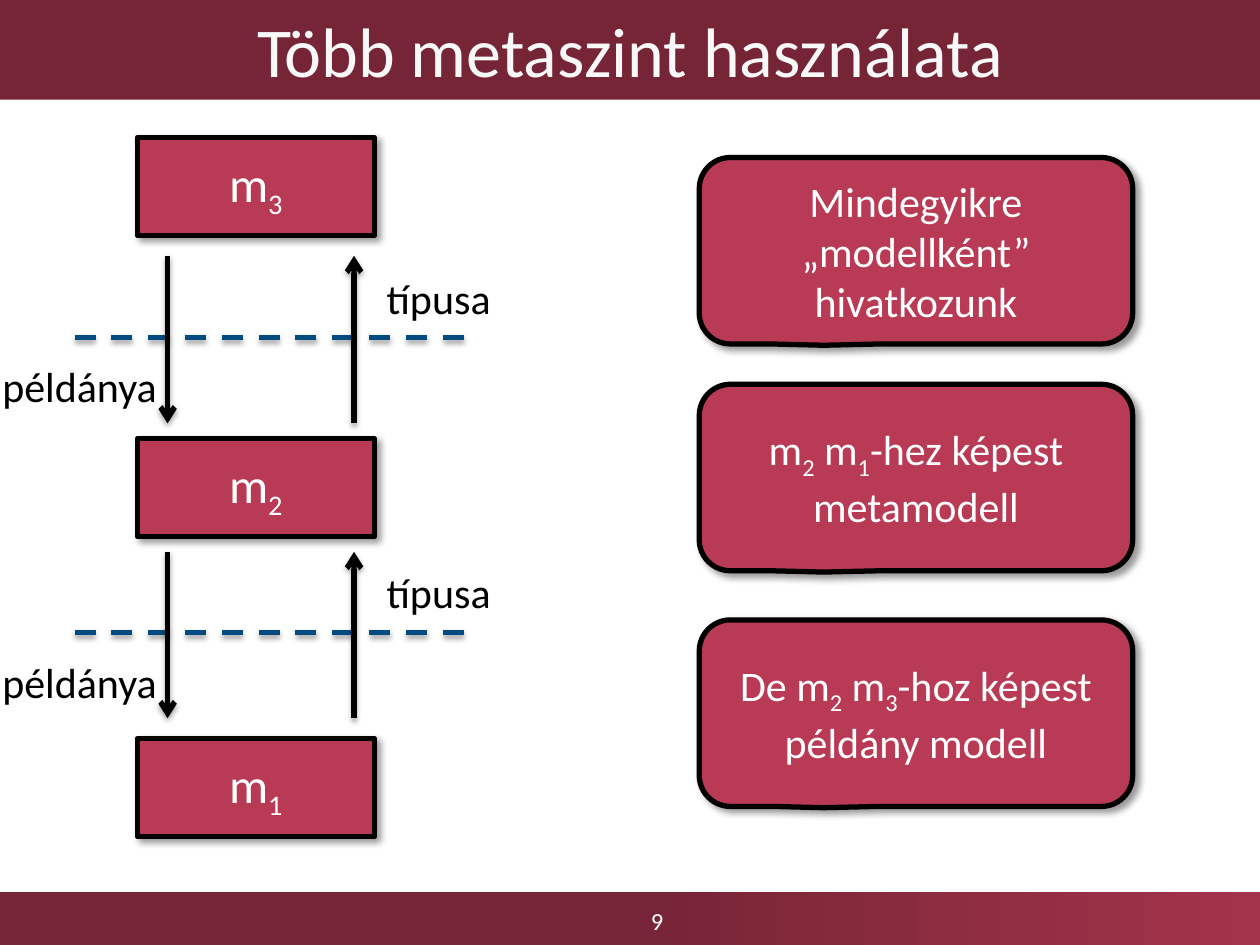
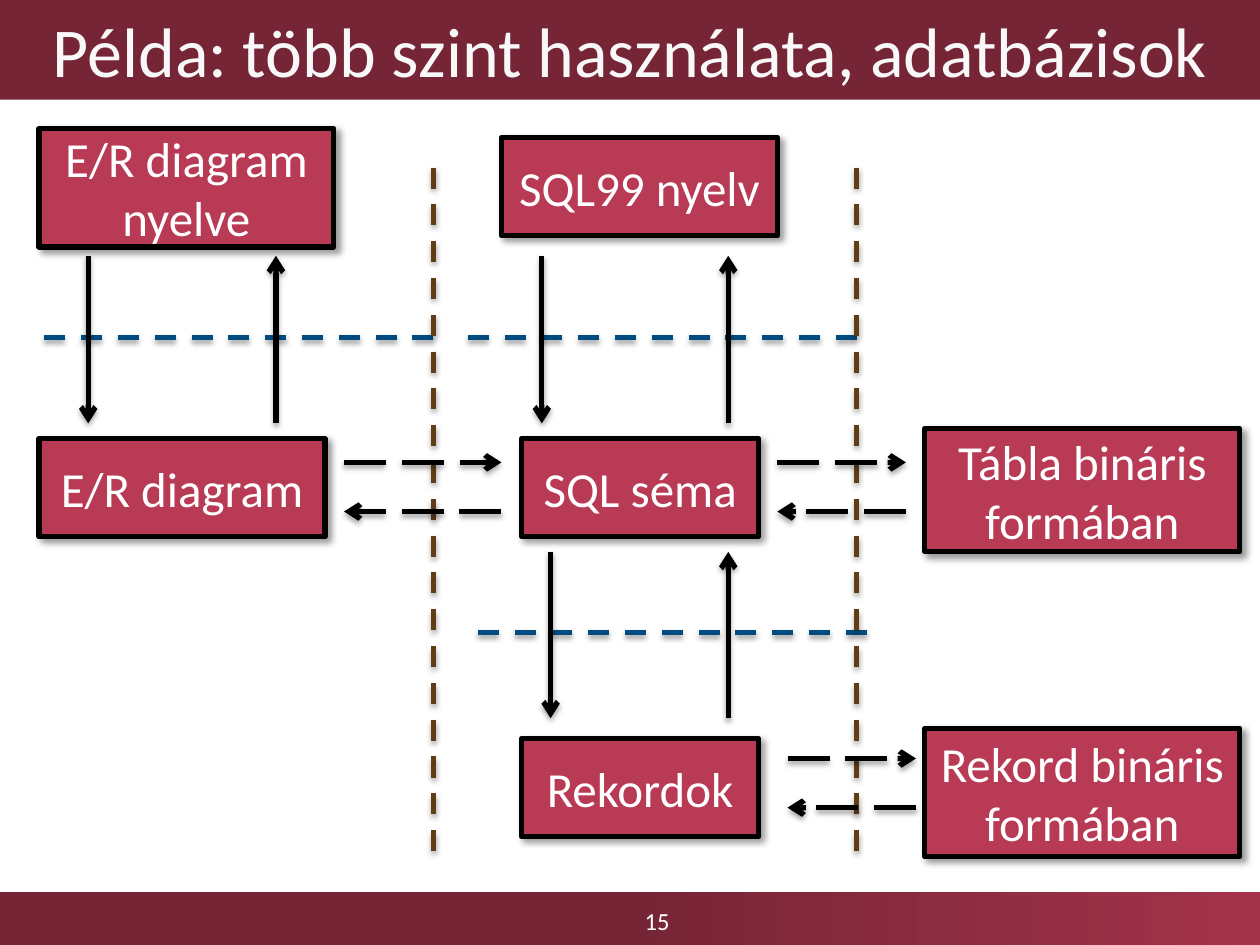
from lxml import etree
from pptx import Presentation
from pptx.dml.color import RGBColor
from pptx.enum.dml import MSO_LINE
from pptx.enum.shapes import MSO_CONNECTOR, MSO_SHAPE
from pptx.enum.text import MSO_ANCHOR, MSO_AUTO_SIZE, PP_ALIGN
from pptx.oxml.ns import qn
from pptx.util import Inches, Pt

RECT, CALLOUT = MSO_SHAPE.RECTANGLE, MSO_SHAPE.ROUNDED_RECTANGULAR_CALLOUT
STRAIGHT = MSO_CONNECTOR.STRAIGHT
DASH, LONG_DASH = MSO_LINE.DASH, MSO_LINE.LONG_DASH
CENTER, LEFT = PP_ALIGN.CENTER, PP_ALIGN.LEFT
MIDDLE, TOP = MSO_ANCHOR.MIDDLE, MSO_ANCHOR.TOP

FONT = "Calibri"
DARK_RED, BAND_RED, BOX_RED = "762536", "A3334B", "B83A55"
BLUE, BROWN, BLACK, WHITE, TITLE_WHITE = "004C80", "613D16", "000000", "FFFFFF", "F8F8F8"
# blur and distance in points, direction in degrees, opacity in percent
BOX_SHADOW, LINE_SHADOW = (4, 3, 45, 40), (3.1, 1.8, 90, 35)
rgb = RGBColor.from_string


def write(sp, text, size=28, color=WHITE, align=CENTER, anchor=MIDDLE):
    """Fill sp with one paragraph; the character after each "_" is a subscript."""
    tf = sp.text_frame
    tf.word_wrap = True
    tf.auto_size = MSO_AUTO_SIZE.NONE
    tf.vertical_anchor = anchor
    p = tf.paragraphs[0]
    p.alignment = align
    first, *rest = text.split("_")
    pieces = [(first, False)]
    for part in rest:
        pieces += [(part[0], True), (part[1:], False)]
    for piece, subscript in pieces:
        if not piece:
            continue
        r = p.add_run()
        r.text = piece
        r.font.name, r.font.size = FONT, Pt(size)
        r.font.color.rgb = rgb(color)
        if subscript:
            r.font._element.set("baseline", "-25000")


def outline(sp, shadow, color=BLACK, dash=None, arrow=False):
    """Give a shape or connector its 3 pt line, arrowhead and shadow."""
    sp.line.width = Pt(3)
    sp.line.color.rgb = rgb(color)
    if dash:
        sp.line.dash_style = dash
    spPr = sp._element.spPr
    if arrow:
        etree.SubElement(spPr.find(qn("a:ln")), qn("a:tailEnd"), type="arrow")
    blur, dist, angle, opacity = shadow
    effects = etree.SubElement(spPr, qn("a:effectLst"))
    outer = etree.SubElement(effects, qn("a:outerShdw"), blurRad=str(Pt(blur)),
                             dist=str(Pt(dist)), dir=str(angle * 60000),
                             algn="tl", rotWithShape="0")
    clr = etree.SubElement(outer, qn("a:srgbClr"), val=BLACK)
    etree.SubElement(clr, qn("a:alpha"), val=str(opacity * 1000))


# Vertical arrows run between the rows of levels
UPPER, LOWER = (2.03, 3.36), (4.38, 5.7)
UPPER_DIVIDER, LOWER_DIVIDER = 2.68, 5.02
DIVIDER_W = 3.21
BOX_H = 0.78

slides = [
    dict(
        title="Több metaszint használata", number="9",
        dividers=[(0.47, UPPER_DIVIDER), (0.47, LOWER_DIVIDER)],
        columns=[],
        levels=[(1.33, 2.81, UPPER), (1.33, 2.81, LOWER)],
        mappings=[],
        boxes=[("m_3", 1.09, 1.09, 1.88, BOX_H),
               ("m_2", 1.09, 3.48, 1.88, BOX_H),
               ("m_1", 1.09, 5.86, 1.88, BOX_H)],
        labels=[("típusa", 2.97, 2.11), ("példánya", -0.08, 2.81),
                ("típusa", 2.97, 4.45), ("példánya", -0.08, 5.16)],
        callouts=[("Mindegyikre „modellként” hivatkozunk", 1.25),
                  ("m_2 m_1-hez képest metamodell", 3.05),
                  ("De m_2 m_3-hoz képest példány modell", 4.92)],
    ),
    dict(
        title="Példa: több szint használata, adatbázisok", number="15",
        dividers=[(0.23, UPPER_DIVIDER), (3.59, UPPER_DIVIDER), (3.67, LOWER_DIVIDER)],
        columns=[3.44, 6.8],
        levels=[(0.7, 2.19, UPPER), (4.3, 5.78, UPPER), (4.37, 5.78, LOWER)],
        mappings=[(2.73, 3.98, 3.67), (6.17, 7.19, 3.67), (6.25, 7.27, 6.02)],
        boxes=[("E/R diagram nyelve", 0.31, 1.02, 2.34, 0.94),
               ("E/R diagram", 0.31, 3.48, 2.27, BOX_H),
               ("SQL99 nyelv", 3.98, 1.09, 2.19, BOX_H),
               ("SQL séma", 4.14, 3.48, 1.88, BOX_H),
               ("Rekordok", 4.14, 5.86, 1.88, BOX_H),
               ("Tábla bináris formában", 7.34, 3.4, 2.5, 0.98),
               ("Rekord bináris formában", 7.34, 5.78, 2.5, 1.02)],
        labels=[],
        callouts=[],
    ),
]

prs = Presentation()
prs.slide_width, prs.slide_height = Inches(10), Inches(7.5)
layout = prs.slide_layouts[5]

for content in slides:
    slide = prs.slides.add_slide(layout)
    shapes = slide.shapes

    # Title band, footer band and slide number
    title = shapes.title
    title.left, title.top = Inches(0), Inches(0)
    title.width, title.height = Inches(10), Inches(0.79)
    title.fill.solid()
    title.fill.fore_color.rgb = rgb(DARK_RED)
    write(title, content["title"], size=40, color=TITLE_WHITE)

    footer = shapes.add_shape(RECT, Inches(0), Inches(7.08), Inches(10), Inches(0.42))
    footer.fill.gradient()
    footer.fill.gradient_angle = 0
    for stop, color, position in zip(footer.fill.gradient_stops,
                                     (DARK_RED, BAND_RED), (0.5, 1)):
        stop.color.rgb = rgb(color)
        stop.position = position
    footer.line.fill.background()
    footer.shadow.inherit = False
    number = shapes.add_textbox(Inches(3.59), Inches(7.11), Inches(3.25), Inches(0.39))
    write(number, content["number"], size=14)

    # Lines as x1, y1, x2, y2 and format
    lines = [(x + DIVIDER_W, y, x, y, dict(color=BLUE, dash=DASH))
             for x, y in content["dividers"]]
    lines += [(x, 1.33, x, 6.8, dict(color=BROWN, dash=DASH)) for x in content["columns"]]
    for down_x, up_x, (top, bottom) in content["levels"]:
        lines += [(down_x, top, down_x, bottom, dict(arrow=True)),
                  (up_x, bottom, up_x, top, dict(arrow=True))]
    for left, right, y in content["mappings"]:
        lines += [(left, y, right, y, dict(dash=LONG_DASH, arrow=True)),
                  (right, y + 0.39, left, y + 0.39, dict(dash=LONG_DASH, arrow=True))]
    for *ends, line_format in lines:
        line = shapes.add_connector(STRAIGHT, *[Inches(v) for v in ends])
        outline(line, LINE_SHADOW, **line_format)

    # Model boxes and callouts
    filled = [(RECT, 28, *box) for box in content["boxes"]]
    filled += [(CALLOUT, 24, text, 5.55, y, 3.44, 1.48) for text, y in content["callouts"]]
    for kind, size, text, *place in filled:
        sp = shapes.add_shape(kind, *[Inches(v) for v in place])
        if kind == CALLOUT:
            for i, value in enumerate((-0.213, 0.507, 0.167)):
                sp.adjustments[i] = value
        sp.fill.solid()
        sp.fill.fore_color.rgb = rgb(BOX_RED)
        outline(sp, BOX_SHADOW)
        write(sp, text, size=size)

    for text, x, y in content["labels"]:
        label = shapes.add_textbox(Inches(x), Inches(y), Inches(1.72), Inches(0.5))
        write(label, text, size=24, color=BLACK, align=LEFT, anchor=TOP)

prs.save("out.pptx")
